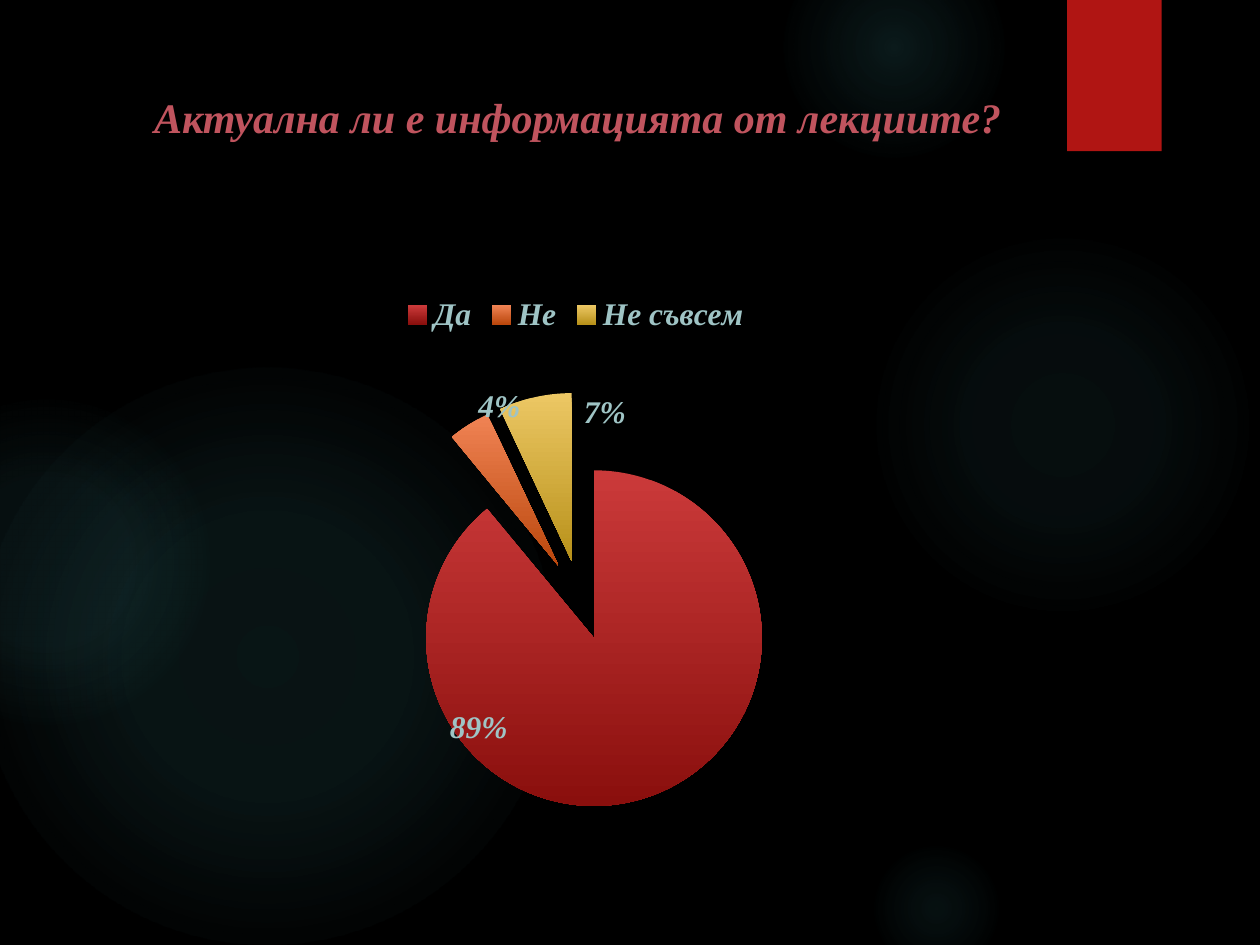
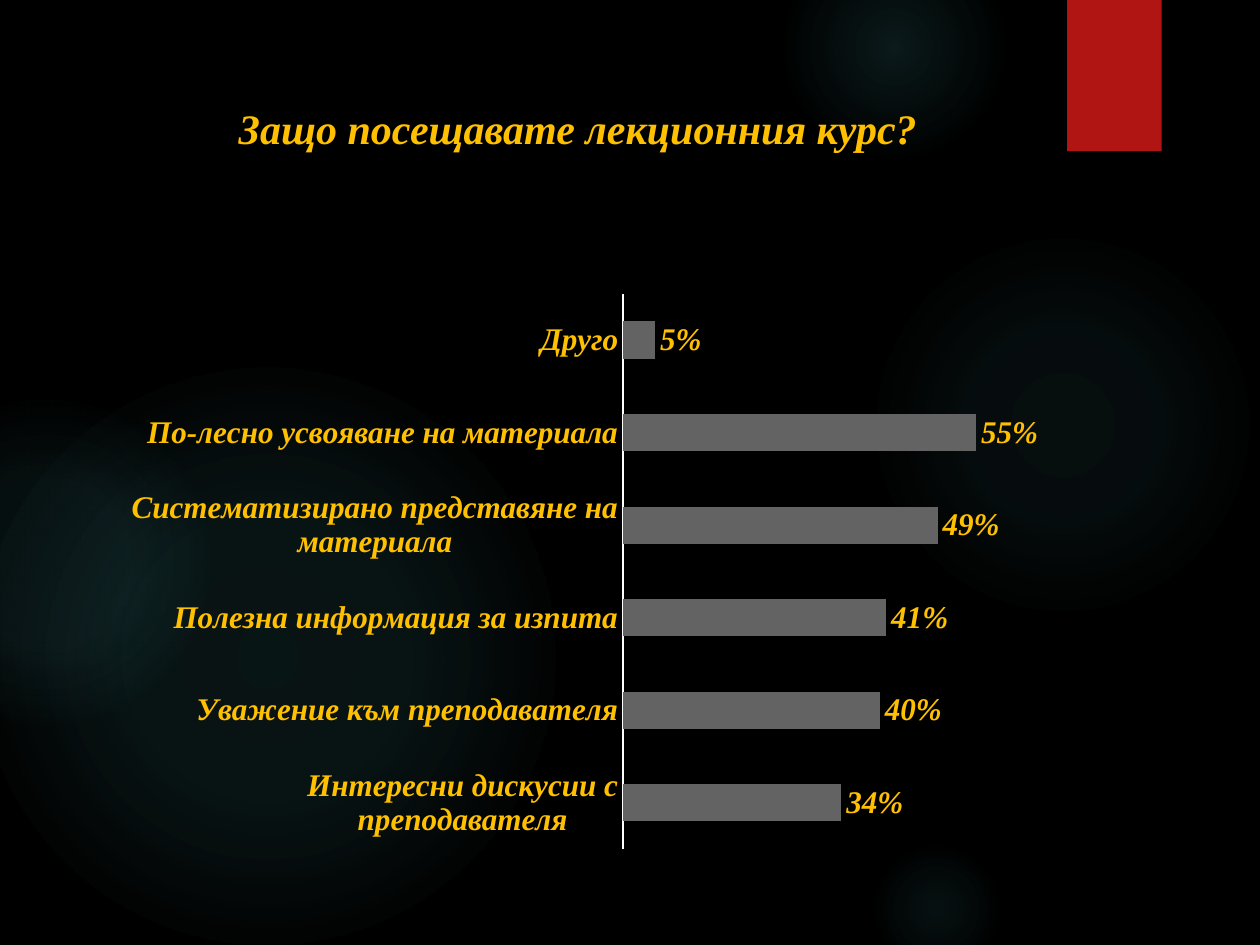
from lxml import etree
from pptx import Presentation
from pptx.chart.data import CategoryChartData
from pptx.dml.color import RGBColor
from pptx.enum.chart import XL_CHART_TYPE, XL_LABEL_POSITION, XL_LEGEND_POSITION, XL_TICK_MARK
from pptx.enum.shapes import MSO_SHAPE
from pptx.enum.text import MSO_ANCHOR, MSO_AUTO_SIZE, PP_ALIGN
from pptx.oxml import parse_xml
from pptx.oxml.ns import qn
from pptx.util import Inches, Pt

PIE, BAR = XL_CHART_TYPE.PIE, XL_CHART_TYPE.BAR_CLUSTERED
OUTSIDE_END = XL_LABEL_POSITION.OUTSIDE_END
LEGEND_TOP = XL_LEGEND_POSITION.TOP
NO_TICKS = XL_TICK_MARK.NONE
OVAL, RECTANGLE = MSO_SHAPE.OVAL, MSO_SHAPE.RECTANGLE
TOP, CENTER, NO_FIT = MSO_ANCHOR.TOP, PP_ALIGN.CENTER, MSO_AUTO_SIZE.NONE

ACTUALITY = {
    "question": "Актуална ли е информацията от лекциите?",
    "answers": [("Да", 89), ("Не", 4), ("Не съвсем", 7)],
}
REASONS = {
    "question": "Защо посещавате лекционния курс?",
    "answers": [
        ("Интересни дискусии с преподавателя", 0.34),
        ("Уважение към преподавателя", 0.40),
        ("Полезна информация за изпита", 0.41),
        ("Систематизирано представяне на материала", 0.49),
        ("По-лесно усвояване на материала", 0.55),
        ("Друго", 0.05),
    ],
}

THEME = {
    "background": "000000",
    "ribbon": "B01513",
    "glow": "50B9C1",
    "rose": "C0545E",
    "gold": "FFC000",
    "mist": "9FC4C5",
    "axis": "FFFFFF",
    "bars": "636363",
    "slices": [("CB3A3A", "8A0F0D"), ("F08354", "BA470C"), ("ECC764", "B8911A")],
    "base": {"name": "League Spartan", "size": Pt(18)},
    "title": {"name": "Times New Roman", "size": Pt(24), "bold": True, "italic": True},
    "label": {"name": "Times New Roman", "size": Pt(18), "bold": True, "italic": True},
}

WIDTH, HEIGHT = 10, 7.5
CONTENT_BOTTOM = 1.55
TITLE_LEFT, TITLE_WIDTH = 0.5, 8.17
CHART_BOX = (0.9, 2.24, 7.34, 4.59)
RIBBON_BOX = (8.47, 0, 0.75, 1.2)
GLOWS = [
    (6.89, 1.83, 3.08, [(0, 7), (36, 6), (69, 0)]),
    (6.22, -0.5, 1.75, [(0, 14), (36, 7), (73, 0)]),
    (6.89, 6.67, 1.08, [(0, 9), (36, 5), (66, 0)]),
    (-0.17, 2.92, 4.58, [(0, 11), (36, 10), (75, 0)]),
    (-0.92, 3.17, 2.58, [(0, 8), (36, 8), (72, 0)]),
]
EXPLOSION = 24
PIE_AREA = {"x": 0.28, "y": 0.19, "w": 0.45, "h": 0.72}
LABEL_SHIFTS = [(-0.22, -0.16), (0.06, 0.01), (0.1, 0.07)]

CHART_NS = 'xmlns:c="http://schemas.openxmlformats.org/drawingml/2006/chart"'
DRAWING_NS = 'xmlns:a="http://schemas.openxmlformats.org/drawingml/2006/main"'


def rgb(name):
    return RGBColor.from_string(THEME.get(name, name))


def apply(target, values):
    for key, value in values.items():
        setattr(target, key, value)


def set_font(font, style, color):
    apply(font, THEME[style])
    font.color.rgb = rgb(color)


def inches(*lengths):
    return [Inches(length) for length in lengths]


def paint(filled, color):
    filled.fill.solid()
    filled.fill.fore_color.rgb = rgb(color)


def radial_fill(stops):
    marks = "".join(
        f'<a:gs pos="{at * 1000}"><a:srgbClr val="{THEME["glow"]}">'
        f'<a:alpha val="{alpha * 1000}"/></a:srgbClr></a:gs>'
        for at, alpha in stops
    )
    return parse_xml(
        f'<a:gradFill {DRAWING_NS} rotWithShape="1"><a:gsLst>{marks}</a:gsLst>'
        '<a:path path="circle"><a:fillToRect l="50000" t="50000" r="50000" b="50000"/>'
        "</a:path></a:gradFill>"
    )


def manual_layout(places, inner=False):
    layout = parse_xml(f"<c:layout {CHART_NS}><c:manualLayout/></c:layout>")
    fields = {"layoutTarget": "inner", "xMode": "edge", "yMode": "edge"} if inner else {}
    for key, value in {**fields, **places}.items():
        etree.SubElement(layout[0], qn(f"c:{key}")).set("val", str(value))
    return layout


def decorate(layout, slide):
    backdrop = []
    for left, top, size, stops in GLOWS:
        glow = slide.shapes.add_shape(OVAL, *inches(left, top, size, size))
        glow.fill.background()
        properties = glow.element.spPr
        properties.replace(properties.find(qn("a:noFill")), radial_fill(stops))
        backdrop.append(glow)
    ribbon = slide.shapes.add_shape(RECTANGLE, *inches(*RIBBON_BOX))
    paint(ribbon, "ribbon")
    backdrop.append(ribbon)
    front = layout.shapes[0].element
    for number, part in enumerate(backdrop, 100):
        part.line.fill.background()
        part.shadow.inherit = False
        part.element.nvSpPr.cNvPr.set("id", str(number))
        front.addprevious(part.element)


def add_title(slide, question, top, color):
    title = slide.shapes.title
    box = inches(TITLE_LEFT, top, TITLE_WIDTH, CONTENT_BOTTOM - top)
    apply(title, dict(zip(("left", "top", "width", "height"), box)))
    frame = title.text_frame
    frame.text = question
    apply(frame, {"vertical_anchor": TOP, "auto_size": NO_FIT, "word_wrap": True})
    frame.paragraphs[0].alignment = CENTER
    set_font(frame.paragraphs[0].runs[0].font, "title", color)


def add_answers(slide, kind, answers, number_format):
    data = CategoryChartData(number_format=number_format)
    data.categories = [answer for answer, _ in answers]
    data.add_series("Series 1", [share for _, share in answers])
    chart = slide.shapes.add_chart(kind, *inches(*CHART_BOX), data).chart
    apply(chart, {"has_title": False, "has_legend": kind == PIE})
    set_font(chart.font, "base", "axis")
    chart.plots[0].vary_by_categories = kind == PIE
    return chart


def format_pie(chart):
    apply(chart.legend, {"position": LEGEND_TOP, "include_in_layout": False})
    set_font(chart.legend.font, "label", "mist")
    series = chart.plots[0].series[0]
    for index, tones in enumerate(THEME["slices"]):
        point = series.points[index]
        fill = point.format.fill
        fill.gradient()
        fill.gradient_angle = 270
        for stop, tone in zip(fill.gradient_stops, tones):
            stop.color.rgb = rgb(tone)
        point.format.line.fill.background()
        set_font(point.data_label.font, "label", "mist")
        point.data_label.position = OUTSIDE_END

    for label, (x, y) in zip(chart.element.xpath("//c:dLbl"), LABEL_SHIFTS):
        label.find(qn("c:idx")).addnext(manual_layout({"x": x, "y": y}))
        label.find(qn("c:showVal")).set("val", "0")
        label.find(qn("c:showPercent")).set("val", "1")

    slices = chart.element.xpath("//c:dPt")
    for follower in [slices[0], *(part.find(qn("c:spPr")) for part in slices)]:
        follower.addprevious(parse_xml(f'<c:explosion {CHART_NS} val="{EXPLOSION}"/>'))

    area = chart.element.xpath("//c:plotArea")[0]
    for automatic in area.findall(qn("c:layout")):
        area.remove(automatic)
    area.insert(0, manual_layout(PIE_AREA, inner=True))


def format_bars(chart):
    plot = chart.plots[0]
    apply(plot, {"gap_width": 150, "has_data_labels": True})
    paint(plot.series[0].format, "bars")
    apply(plot.data_labels, {
        "show_value": True, "position": OUTSIDE_END,
        "number_format": "0%", "number_format_is_linked": False,
    })
    set_font(plot.data_labels.font, "label", "gold")
    apply(chart.value_axis, {
        "visible": False, "has_major_gridlines": False,
        "minimum_scale": 0, "maximum_scale": 0.6,
    })
    reasons = chart.category_axis
    apply(reasons, {"major_tick_mark": NO_TICKS, "minor_tick_mark": NO_TICKS})
    set_font(reasons.tick_labels.font, "label", "gold")
    reasons.format.line.color.rgb = rgb("axis")
    reasons.format.line.width = Pt(0.75)


def main():
    deck = Presentation()
    deck.slide_width, deck.slide_height = inches(WIDTH, HEIGHT)
    paint(deck.slide_master.background, "background")
    layout = deck.slide_layouts[5]
    actuality, reasons = [deck.slides.add_slide(layout) for _ in range(2)]
    decorate(layout, actuality)

    add_title(actuality, ACTUALITY["question"], 0.68, "rose")
    format_pie(add_answers(actuality, PIE, ACTUALITY["answers"], "General"))

    add_title(reasons, REASONS["question"], 0.76, "gold")
    format_bars(add_answers(reasons, BAR, REASONS["answers"], "0%"))

    deck.save("out.pptx")


if __name__ == "__main__":
    main()
